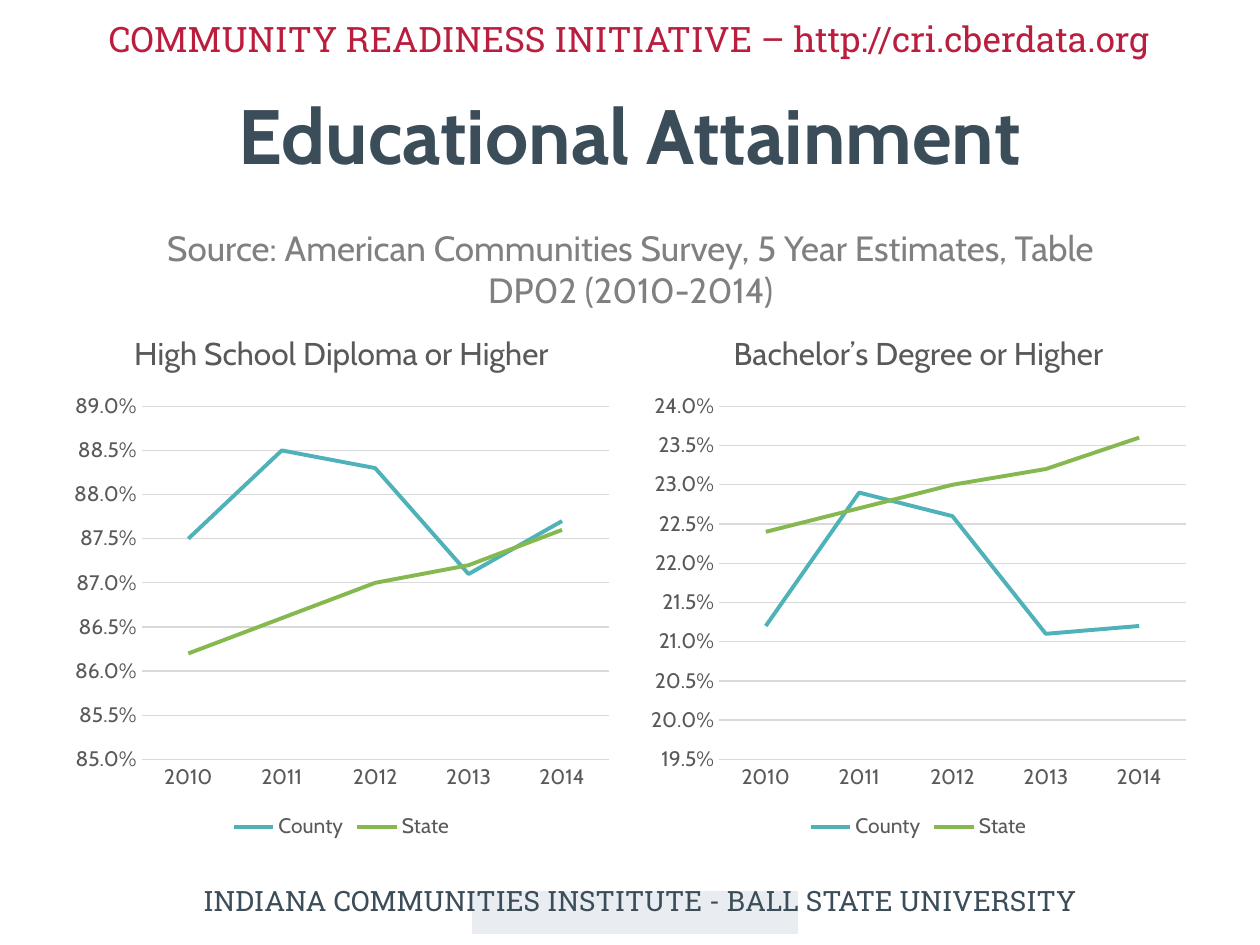
"""Build the educational attainment slide with two line charts."""
from pptx import Presentation
from pptx import util as u
from pptx.chart.data import CategoryChartData
from pptx.dml.color import RGBColor
from pptx.enum import chart as ch, shapes, text

W, H = 10, 7.5
THEME = {
    "body": "Cabin", "slab": "Roboto Slab",
    "navy": "3B4D59", "red": "BA1D3D", "gray": "808080", "label": "595959",
    "grid": "D9D9D9", "pale": "E9ECF1", "white": "FFFFFF",
    "lines": ("4FB2B9", "86B850"),
    "head": 44, "text": 20, "foot": 16, "name": 18, "tick": 12,
    "rule": 0.75, "curve": 2.25,
}
BARS = [
    ((3.75, 7.08, 2.58, 0.33), "pale"),
    ((0, 0, W, 0.58), "white"),
]
TEXTS = [
    ("INDIANA COMMUNITIES INSTITUTE - BALL STATE UNIVERSITY",
     (0.58, 6.96, 9, 0.37), "slab", "foot", "navy", False),
    ("COMMUNITY READINESS INITIATIVE – http://cri.cberdata.org",
     (0.08, 0.09, 9.83, 0.44), "slab", "text", "red", False),
    ("Educational Attainment",
     (0.5, 0.58, 9, 0.97), "body", "head", "navy", True),
    ("Source: American Communities Survey, 5 Year Estimates, Table DP02 (2010-2014)",
     (0.92, 1.75, 8.17, 0.5), "body", "text", "gray", False),
]
YEARS = ["2010", "2011", "2012", "2013", "2014"]
CHARTS = [
    ("High School Diploma or Higher", (0.85, 0.89), {
        "County": (0.875, 0.885, 0.883, 0.871, 0.877),
        "State": (0.862, 0.866, 0.87, 0.872, 0.876)}),
    ("Bachelor’s Degree or Higher", (0.195, 0.24), {
        "County": (0.212, 0.229, 0.226, 0.211, 0.212),
        "State": (0.224, 0.227, 0.23, 0.232, 0.236)}),
]
EDGE, GAP, TOP, TALL = 0.5, 0.16, 2.45, 4.25
WIDE = (W - 2 * EDGE - GAP) / len(CHARTS)


def tint(name):
    return RGBColor.from_string(THEME.get(name, name))


def style(font, size, color, face="body", bold=False):
    font.name, font.size, font.bold = THEME[face], u.Pt(THEME[size]), bold
    font.color.rgb = tint(color)


def stroke(line, color, width):
    line.color.rgb, line.width = tint(color), u.Pt(THEME[width])


def add_bar(slide, box, color):
    bar = slide.shapes.add_shape(shapes.MSO_SHAPE.RECTANGLE, *map(u.Inches, box))
    bar.shadow.inherit = False
    bar.fill.solid()
    bar.fill.fore_color.rgb = tint(color)
    stroke(bar.line, color, "rule")


def add_text(slide, words, box, face, size, color, bold):
    frame = slide.shapes.add_textbox(*map(u.Inches, box)).text_frame
    frame.word_wrap = True
    if size == "head":
        frame.vertical_anchor = text.MSO_ANCHOR.MIDDLE
    frame.text = words
    para = frame.paragraphs[0]
    para.alignment = text.PP_ALIGN.CENTER
    style(para.runs[0].font, size, color, face, bold)


def add_plot(slide, col, name, span, rows):
    data = CategoryChartData(number_format="0.0%")
    data.categories = YEARS
    for key, vals in rows.items():
        data.add_series(key, vals)
    box = (EDGE + col * (WIDE + GAP), TOP, WIDE, TALL)
    chart = slide.shapes.add_chart(
        ch.XL_CHART_TYPE.LINE, *map(u.Inches, box), data).chart
    style(chart.font, "tick", "label")
    chart.has_title = True
    frame = chart.chart_title.text_frame
    frame.text = name
    style(frame.paragraphs[0].runs[0].font, "name", "label")
    chart.chart_title.include_in_layout = False
    chart.has_legend = True
    chart.legend.position = ch.XL_LEGEND_POSITION.BOTTOM
    chart.legend.include_in_layout = False
    style(chart.legend.font, "tick", "label")
    for axis in (chart.category_axis, chart.value_axis):
        axis.major_tick_mark = axis.minor_tick_mark = ch.XL_TICK_MARK.NONE
        style(axis.tick_labels.font, "tick", "label")
    stroke(chart.category_axis.format.line, "grid", "rule")
    axis = chart.value_axis
    axis.minimum_scale, axis.maximum_scale = span
    axis.major_unit = 0.005
    axis.tick_labels.number_format = "0.0%"
    axis.tick_labels.number_format_is_linked = False
    axis.format.line.fill.background()
    stroke(axis.major_gridlines.format.line, "grid", "rule")
    chart.plots[0].vary_by_categories = False
    for row, color in zip(chart.plots[0].series, THEME["lines"]):
        row.smooth = False
        row.marker.style = ch.XL_MARKER_STYLE.NONE
        stroke(row.format.line, color, "curve")


def main():
    deck = Presentation()
    deck.slide_width, deck.slide_height = u.Inches(W), u.Inches(H)
    slide = deck.slides.add_slide(deck.slide_layouts[6])
    for bar in BARS:
        add_bar(slide, *bar)
    for item in TEXTS[:-1]:
        add_text(slide, *item)
    for col, plot in enumerate(CHARTS):
        add_plot(slide, col, *plot)
    add_text(slide, *TEXTS[-1])
    deck.save("out.pptx")


if __name__ == "__main__":
    main()
